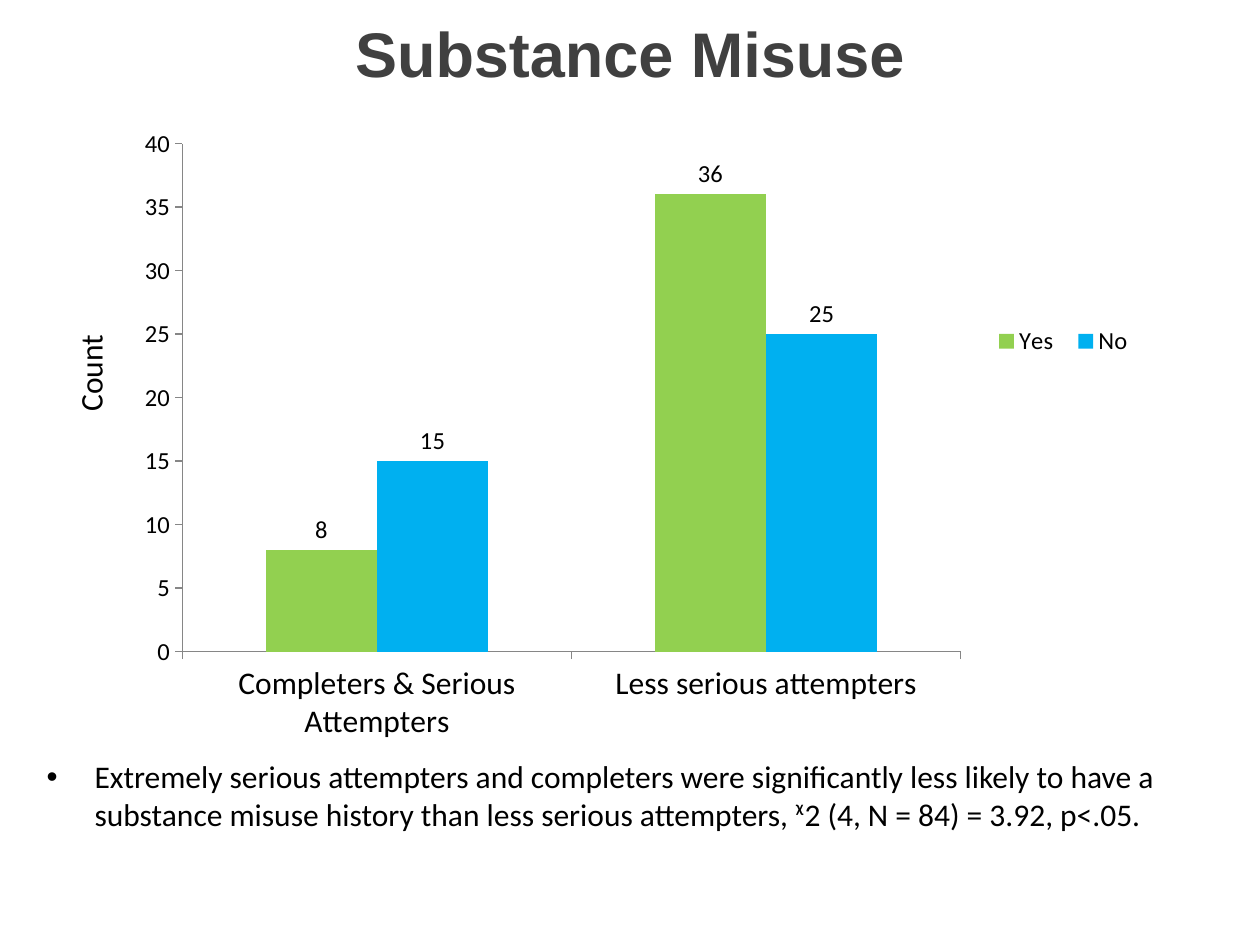
"""Build the Substance Misuse slide: a clustered column chart and its finding."""
from lxml import etree
from pptx import Presentation
from pptx.chart.data import CategoryChartData
from pptx.dml.color import RGBColor
from pptx.enum.chart import XL_CHART_TYPE, XL_LABEL_POSITION, XL_LEGEND_POSITION, XL_TICK_MARK
from pptx.enum.text import MSO_ANCHOR, MSO_AUTO_SIZE, PP_ALIGN
from pptx.oxml.ns import qn
from pptx.util import Inches, Pt

COLUMN_CLUSTERED = XL_CHART_TYPE.COLUMN_CLUSTERED
OUTSIDE_END = XL_LABEL_POSITION.OUTSIDE_END
LEGEND_RIGHT = XL_LEGEND_POSITION.RIGHT
TICK_OUTSIDE = XL_TICK_MARK.OUTSIDE
MIDDLE, TOP = MSO_ANCHOR.MIDDLE, MSO_ANCHOR.TOP
NO_AUTOFIT = MSO_AUTO_SIZE.NONE
CENTER, LEFT = PP_ALIGN.CENTER, PP_ALIGN.LEFT

BLACK = RGBColor(0x00, 0x00, 0x00)
CHARCOAL = RGBColor(0x40, 0x40, 0x40)
AXIS_GRAY = RGBColor(0x86, 0x86, 0x86)
GREEN = RGBColor(0x92, 0xD0, 0x50)
BLUE = RGBColor(0x00, 0xB0, 0xF0)

TITLE_FONT = {"name": "Arial", "size": Pt(36), "bold": True}
BODY_FONT = {"name": "Calibri", "size": Pt(18), "bold": False}
SMALL_FONT = {**BODY_FONT, "size": Pt(14)}

GROUPS = ["Completers & Serious Attempters", "Less serious attempters"]
ANSWERS = [("Yes", [8, 36], GREEN), ("No", [15, 25], BLUE)]
FINDING = (
    "Extremely serious attempters and completers were significantly less likely to have a "
    "substance misuse history than less serious attempters, ᵡ2 (4, N = 84) = 3.92, p<.05."
)


def apply_format(target, values):
    """Set every attribute named in values on the target."""
    for name, value in values.items():
        setattr(target, name, value)


def style_font(font, values, color=BLACK):
    """Give a font its face, size, weight and colour."""
    apply_format(font, values)
    font.color.rgb = color


def place(shape, left, top, width, height):
    """Position a shape using lengths in inches."""
    names = ("left", "top", "width", "height")
    apply_format(shape, dict(zip(names, map(Inches, (left, top, width, height)))))


def write_text(shape, text, font, color=BLACK, align=LEFT, anchor=TOP):
    """Fill a shape with one formatted paragraph and return it."""
    frame = shape.text_frame
    apply_format(frame, {"word_wrap": True, "auto_size": NO_AUTOFIT, "vertical_anchor": anchor})
    frame.text = text
    paragraph = frame.paragraphs[0]
    apply_format(paragraph, {"alignment": align, "space_before": Pt(0)})
    style_font(paragraph.runs[0].font, font, color)
    return paragraph


def add_bullet(paragraph, indent):
    """Hang a round bullet to the left of the paragraph."""
    properties = paragraph._p.get_or_add_pPr()
    properties.set("marL", str(Inches(indent)))
    properties.set("indent", str(-Inches(indent)))
    etree.SubElement(properties, qn("a:buFont")).set("typeface", "Arial")
    etree.SubElement(properties, qn("a:buChar")).set("char", "•")


def set_layout(parent, index, bounds, inner=False):
    """Fix a chart part at fractions of the chart area."""
    for existing in parent.findall(qn("c:layout")):
        parent.remove(existing)
    layout = etree.Element(qn("c:layout"))
    parent.insert(index, layout)
    manual = etree.SubElement(layout, qn("c:manualLayout"))
    settings = {"layoutTarget": "inner"} if inner else {}
    settings.update(xMode="edge", yMode="edge", **dict(zip("xywh", bounds)))
    for name, value in settings.items():
        etree.SubElement(manual, qn(f"c:{name}")).set("val", str(value))


def style_axis(axis, font):
    """Draw an axis with outside ticks and no gridlines."""
    apply_format(axis, {
        "has_major_gridlines": False,
        "major_tick_mark": TICK_OUTSIDE,
    })
    axis.format.line.color.rgb = AXIS_GRAY
    axis.format.line.width = Pt(0.75)
    style_font(axis.tick_labels.font, font)


def style_series(series, color):
    """Colour a series and label its columns with their values."""
    series.format.fill.solid()
    series.format.fill.fore_color.rgb = color
    labels = series.data_labels
    apply_format(labels, {"show_value": True, "position": OUTSIDE_END})
    style_font(labels.font, SMALL_FONT)


def add_legend(chart):
    """Show the answers to the right of the columns."""
    chart.has_legend = True
    legend = chart.legend
    apply_format(legend, {"position": LEGEND_RIGHT, "include_in_layout": False})
    style_font(legend.font, SMALL_FONT)
    set_layout(legend._element, 1, (0.84, 0.2, 0.15, 0.29))


def add_misuse_chart(slide):
    """Add the counts of substance misuse by attempter group."""
    counts = CategoryChartData()
    counts.categories = GROUPS
    for answer, values, _ in ANSWERS:
        counts.add_series(answer, values)
    bounds = map(Inches, (0.59, 0.99, 8.58, 4.98))
    chart = slide.shapes.add_chart(COLUMN_CLUSTERED, *bounds, counts).chart
    chart.has_title = False
    style_font(chart.font, BODY_FONT)
    columns = chart.plots[0]
    apply_format(columns, {"gap_width": 150, "overlap": 0, "vary_by_categories": False})
    for series, (_, _, color) in zip(columns.series, ANSWERS):
        style_series(series, color)
    style_axis(chart.category_axis, BODY_FONT)
    style_axis(chart.value_axis, SMALL_FONT)
    apply_format(chart.value_axis, {"minimum_scale": 0, "maximum_scale": 40, "major_unit": 5})
    add_legend(chart)
    plot_area = chart._chartSpace.find(f".//{qn('c:plotArea')}")
    set_layout(plot_area, 0, (0.1, 0.03, 0.72, 0.81), inner=True)


def add_count_label(slide):
    """Add the rotated caption of the value axis."""
    caption = slide.shapes.add_textbox(*map(Inches, (0.24, 2.76, 0.95, 0.4)))
    caption.rotation = 270
    write_text(caption, "Count", BODY_FONT, align=CENTER)


def main():
    """Build and save the slide."""
    deck = Presentation()
    apply_format(deck, {"slide_width": Inches(10), "slide_height": Inches(7.5)})
    slide = deck.slides.add_slide(deck.slide_layouts[1])
    title, finding = slide.placeholders
    place(title, 0, 0, 10, 0.83)
    write_text(title, "Substance Misuse", TITLE_FONT, CHARCOAL, CENTER, MIDDLE)
    place(finding, 0.27, 5.96, 9.53, 0.71)
    add_bullet(write_text(finding, FINDING, BODY_FONT), 0.38)
    add_misuse_chart(slide)
    add_count_label(slide)
    deck.save("out.pptx")


if __name__ == "__main__":
    main()
